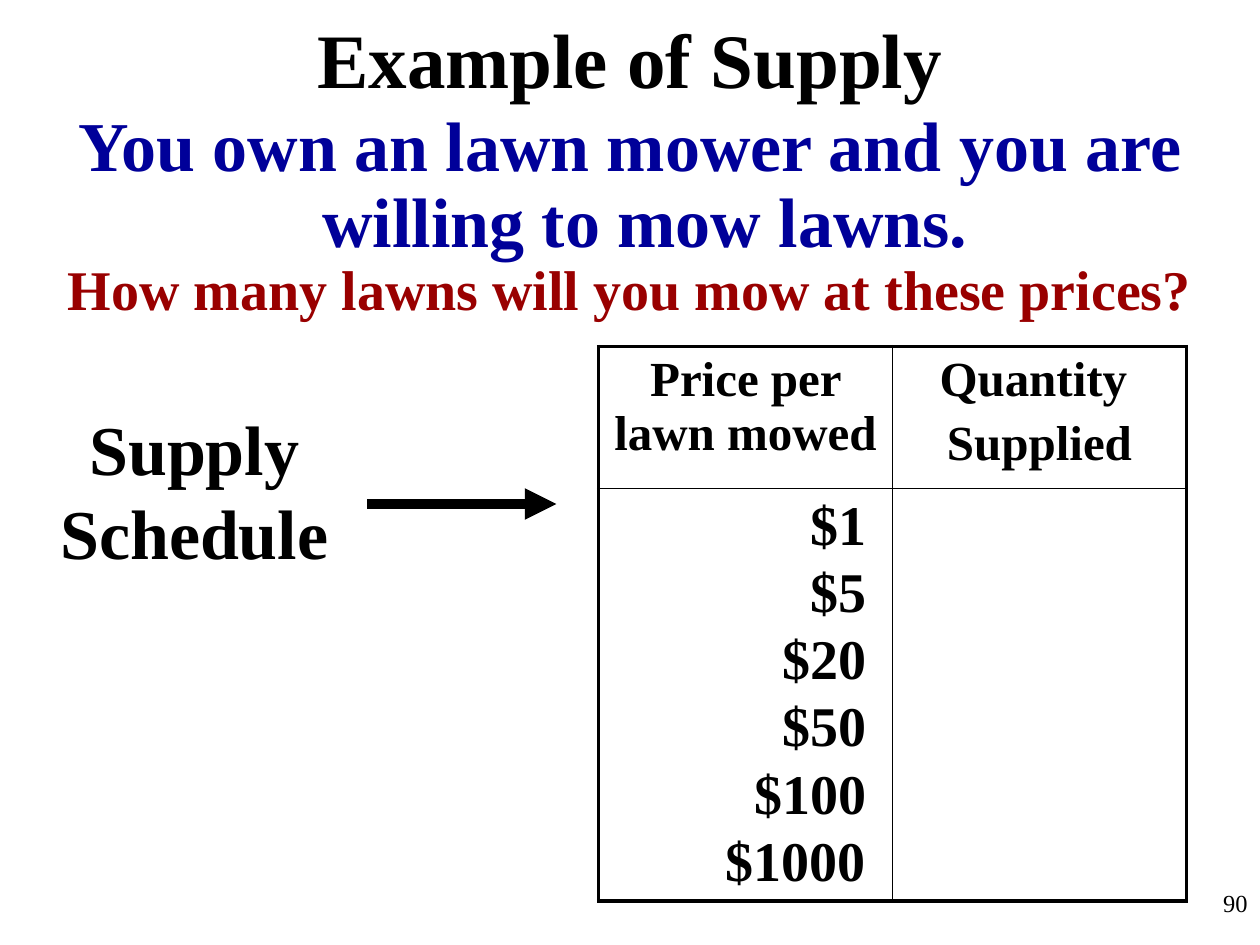
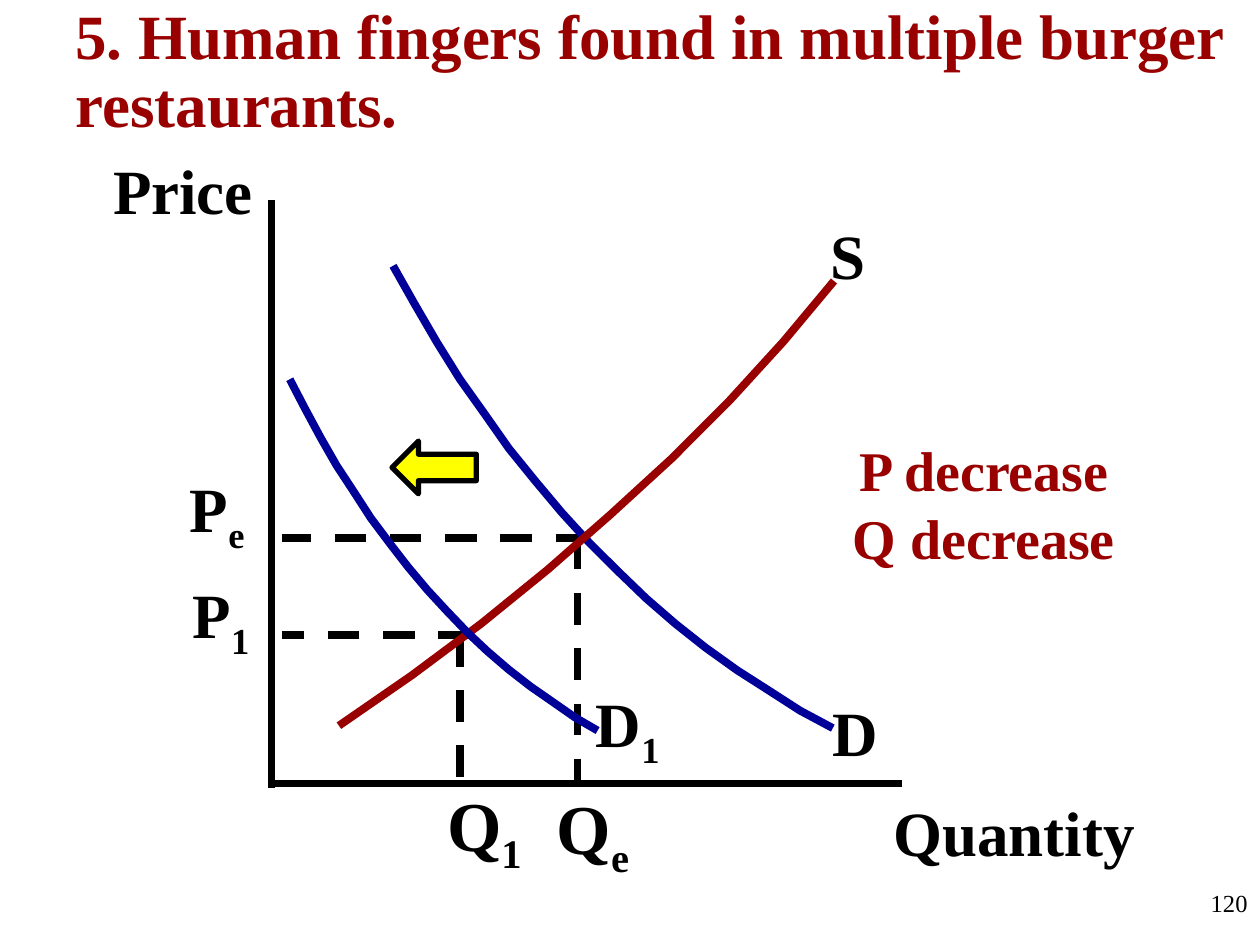
from collections import namedtuple
from itertools import product

from lxml.etree import SubElement
from pptx import Presentation
from pptx.dml.color import RGBColor
from pptx.enum.dml import MSO_LINE
from pptx.enum.shapes import MSO_CONNECTOR, MSO_SHAPE
from pptx.enum.text import MSO_ANCHOR, PP_ALIGN
from pptx.oxml import parse_xml
from pptx.oxml.ns import nsdecls, qn
from pptx.util import Pt

BLACK = RGBColor(0x00, 0x00, 0x00)
BLUE = RGBColor(0x00, 0x00, 0x99)
RED = RGBColor(0x99, 0x00, 0x00)
YELLOW = RGBColor(0xFF, 0xFF, 0x00)
FONT = "Times New Roman"
CURVE_WIDTH = 4.5
AXIS_WIDTH = 4
OUTER_BORDER = 2.25
INNER_BORDER = 1

Box = namedtuple("Box", "left top width height")

DEMAND = [(0, 0), (12.2, 21.6), (25.2, 43.9), (38.2, 64.8), (52.6, 85),
          (66.2, 104.4), (81.4, 123.1), (96.5, 141.1), (112.3, 158.4),
          (128.2, 174.2), (144.7, 190.1), (161.3, 204.5), (178.6, 218.2),
          (196.6, 231.1), (214.6, 242.6), (232.6, 254.2), (251.3, 264.2)]
SUPPLY = [(0, 0), (41.7, -28.8), (81.3, -58.3), (119.5, -89.3), (155.5, -120.9),
          (190.1, -152.6), (223.2, -185.7), (254.1, -219.6), (282.9, -254.1)]


def inside(box, left, top, width, height):
    """Return a box placed relative to the corner of another box."""
    return Box(box.left + left, box.top + top, width, height)


def points(*lengths):
    """Convert numbers to point lengths."""
    return [Pt(length) for length in lengths]


def write(frame, text, size=36, color=BLACK, bold=True, align=PP_ALIGN.LEFT,
          spacing=None, before=0, margin=0, indent=0, subscript="", more=False):
    """Write one paragraph for each line of text into a text frame."""
    for number, line in enumerate(text.split("\n")):
        para = frame.add_paragraph() if more or number else frame.paragraphs[0]
        properties = para._p.get_or_add_pPr()
        properties.set("marL", str(Pt(margin)))
        properties.set("indent", str(Pt(indent)))
        para.alignment = align
        para.line_spacing = spacing
        para.space_before = Pt(before if more or number else 0)
        for part in filter(None, (line, subscript)):
            span = para.add_run()
            span.text = part
            span.font.name = FONT
            span.font.size = Pt(size)
            span.font.bold = bold
            span.font.color.rgb = color
        if subscript:
            span.font._element.set("baseline", "-25000")


def add_text(page, box, text, anchor=MSO_ANCHOR.TOP, **style):
    """Add a wrapping text box and return its frame."""
    frame = page.shapes.add_textbox(*points(*box)).text_frame
    frame.word_wrap = True
    frame.vertical_anchor = anchor
    write(frame, text, **style)
    return frame


def add_line(page, start, end, width, dashed=False, arrow=False):
    """Draw a straight black line between two positions."""
    line = page.shapes.add_connector(MSO_CONNECTOR.STRAIGHT, *points(*start, *end))
    line.line.color.rgb = BLACK
    line.line.width = Pt(width)
    if dashed:
        line.line.dash_style = MSO_LINE.DASH
    if arrow:
        SubElement(line.line._get_or_add_ln(), qn("a:tailEnd"), type="triangle")
    SubElement(line._element.spPr, qn("a:effectLst"))


def add_curve(page, box, start, offsets, color, scale=(1, 1)):
    """Draw an open curve from a start position and scaled offsets."""
    left, top = box.left + start[0], box.top + start[1]
    spots = [points(left + x * scale[0], top + y * scale[1]) for x, y in offsets]
    builder = page.shapes.build_freeform(*spots[0])
    builder.add_line_segments(spots[1:], close=False)
    curve = builder.convert_to_shape()
    curve.shadow.inherit = False
    curve.fill.background()
    curve.line.color.rgb = color
    curve.line.width = Pt(CURVE_WIDTH)


def add_page(deck, number):
    """Add a blank page with its page number."""
    page = deck.slides.add_slide(deck.slide_layouts[6])
    add_text(page, Box(570, 504, 150, 36), number, size=14, bold=False,
             align=PP_ALIGN.RIGHT)
    return page


def set_borders(cell, row, column):
    """Give a cell thick outer and thin inner borders in a two by two table."""
    thick = {"L": column == 0, "R": column == 1, "T": row == 0, "B": row == 1}
    properties = cell._tc.get_or_add_tcPr()
    for place, (side, outer) in enumerate(thick.items()):
        width = Pt(OUTER_BORDER if outer else INNER_BORDER)
        properties.insert(place, parse_xml(
            f'<a:ln{side} {nsdecls("a")} w="{width}"><a:solidFill>'
            f'<a:srgbClr val="{BLACK}"/></a:solidFill></a:ln{side}>'))


def add_schedule(page, box):
    """Add the supply schedule table and its list of prices."""
    table = page.shapes.add_table(2, 2, *points(*box)).table
    table.first_row = table.horz_banding = False
    header = 81.2
    table.rows[0].height = Pt(header)
    table.rows[1].height = Pt(box.height - header)
    for row, column in product(range(2), repeat=2):
        cell = table.cell(row, column)
        cell.margin_left = cell.margin_right = 0
        cell.fill.background()
        set_borders(cell, row, column)
    for column, heading in enumerate(("Price per lawn mowed", "Quantity \nSupplied")):
        write(table.cell(0, column).text_frame, heading, size=28,
              align=PP_ALIGN.CENTER, before=5.6)
    add_text(page, inside(box, 42, 78, 118, 238), "$1\n$5\n$20\n$50\n$100\n$1000",
             size=32, align=PP_ALIGN.RIGHT)


def add_supply_page(deck):
    """Build the page with the example of supply."""
    page = add_page(deck, "90")
    add_text(page, Box(54, -12, 612, 90), "Example of Supply", size=44,
             align=PP_ALIGN.CENTER, anchor=MSO_ANCHOR.MIDDLE)
    body = dict(align=PP_ALIGN.CENTER, spacing=0.9, margin=27, indent=-27)
    frame = add_text(page, Box(0, 60, 720, 324),
                     "You own an lawn mower and you are willing to mow lawns. ",
                     size=40, color=BLUE, **body)
    write(frame, "How many lawns will you mow at these prices?", size=32,
          color=RED, more=True, **body)
    add_schedule(page, Box(342, 198, 336, 316.8))
    add_text(page, Box(24, 228, 174, 103), "Supply Schedule", size=40,
             align=PP_ALIGN.CENTER)
    add_line(page, (210, 288), (318, 288), 6, arrow=True)


def add_market(page, box):
    """Draw axes, curves, guides and labels of the market in the axes box."""
    bottom, right = box.top + box.height, box.left + box.width
    for corner, price in ((113.5, 248.4), (180.5, 192.9)):
        x, y = box.left + corner, box.top + price
        add_line(page, (x, y), (box.left + 6.3, y), CURVE_WIDTH, dashed=True)
        add_line(page, (x - 5.5, y), (x - 5.5, bottom - 2), CURVE_WIDTH, dashed=True)
    add_line(page, (box.left, box.top), (box.left, bottom + 2), AXIS_WIDTH)
    add_line(page, (box.left - 2, bottom), (right, bottom), AXIS_WIDTH)
    add_curve(page, box, (69.6, 37.4), DEMAND, BLUE)
    add_curve(page, box, (38.7, 300.2), SUPPLY, RED)
    add_curve(page, box, (10.6, 102.2), DEMAND, BLUE, scale=(0.7, 0.76))

    add_text(page, inside(box, -97.4, -31.7, 108, 51), "Price",
             anchor=MSO_ANCHOR.MIDDLE)
    labels = [("S", "", 312.3, 5.7, 34.6, 36), ("D", "", 313.7, 278, 41, 36),
              ("Quantity", "", 348.3, 335.5, 154, 36),
              ("D", "1", 178.4, 273, 53.3, 36), ("P", "e", -53.5, 150.5, 47.5, 36),
              ("P", "1", -52, 211, 49, 36), ("Q", "e", 156, 330.5, 58.3, 40),
              ("Q", "1", 93.4, 328.3, 59.8, 40)]
    for name, subscript, left, top, width, size in labels:
        add_text(page, inside(box, left, top, width, 51), name, size=size,
                 subscript=subscript)

    shift = page.shapes.add_shape(MSO_SHAPE.RIGHT_ARROW,
                                  *points(*inside(box, 69, 137.5, 48.2, 30.2)))
    shift.rotation = 180
    shift.shadow.inherit = False
    shift.fill.solid()
    shift.fill.fore_color.rgb = YELLOW
    shift.line.color.rgb = BLACK
    shift.line.width = Pt(3)


def add_demand_page(deck):
    """Build the page with the fall in demand."""
    page = add_page(deck, "120")
    add_text(page, Box(0, -0.7, 720, 86),
             "5. Human fingers found in multiple burger restaurants.",
             color=RED, spacing=0.9, margin=36)
    add_market(page, Box(155, 114.5, 360.5, 333.5))
    add_text(page, Box(454.3, 245.5, 216, 85), "P decrease\nQ decrease", size=32,
             color=RED, align=PP_ALIGN.CENTER)


def main():
    """Build and save the deck."""
    deck = Presentation()
    deck.slide_width, deck.slide_height = points(720, 540)
    add_supply_page(deck)
    add_demand_page(deck)
    deck.save("out.pptx")


if __name__ == "__main__":
    main()
